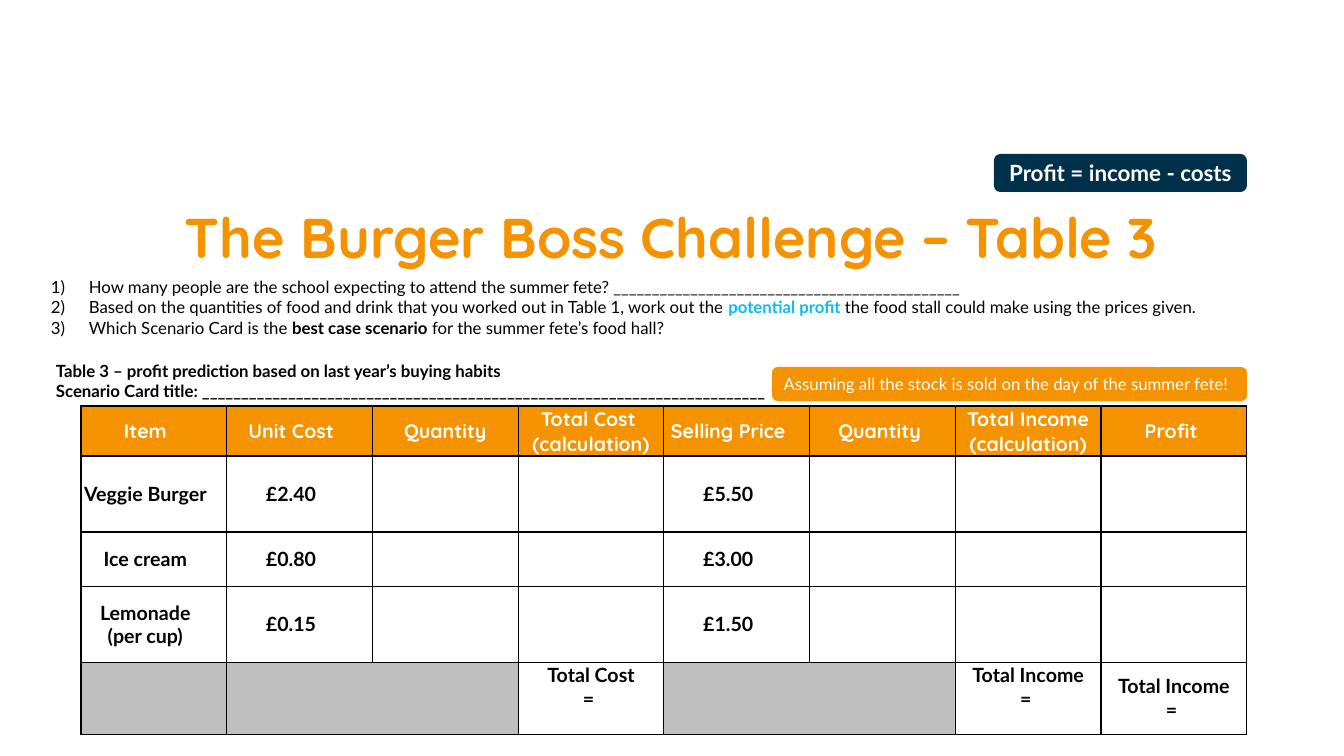
from lxml import etree
from pptx import Presentation
from pptx.dml.color import RGBColor
from pptx.enum.shapes import MSO_SHAPE
from pptx.enum.text import MSO_ANCHOR, MSO_AUTO_SIZE, PP_ALIGN
from pptx.oxml.ns import qn
from pptx.util import Pt

SCALE = 914400 / 100.8
ORANGE = RGBColor(0xF4, 0x92, 0x00)
NAVY = RGBColor(0x01, 0x30, 0x4A)
BLUE = RGBColor(0x0F, 0xBA, 0xEF)
GREY = RGBColor(0xBF, 0xBF, 0xBF)
BLACK = RGBColor(0, 0, 0)
WHITE = RGBColor(255, 255, 255)
BODY, HEAD = "Lato", "Quicksand"
ROUND = MSO_SHAPE.ROUNDED_RECTANGLE
LEFT, CENTER = PP_ALIGN.LEFT, PP_ALIGN.CENTER
TOP, MIDDLE = MSO_ANCHOR.TOP, MSO_ANCHOR.MIDDLE
NO_FIT, GROW = MSO_AUTO_SIZE.NONE, MSO_AUTO_SIZE.SHAPE_TO_FIT_TEXT

TASKS = [
    [("How many people are the school expecting to attend the summer fete? "
      + "_" * 45, False, BLACK)],
    [("Based on the quantities of food and drink that you worked out in "
      "Table 1, work out the ", False, BLACK),
     ("potential profit ", True, BLUE),
     ("the food stall could make using the prices given.", False, BLACK)],
    [("Which Scenario Card is the ", False, BLACK),
     ("best case scenario", True, BLACK),
     (" for the summer fete’s food hall?", False, BLACK)],
]
HEADS = ["Item", "Unit Cost", "Quantity", "Total Cost \n(calculation)",
         "Selling Price", "Quantity ", "Total Income\n(calculation)", "Profit "]
ITEMS = [("Veggie Burger", "£2.40", "£5.50"),
         ("Ice cream", "£0.80", "£3.00"),
         ("Lemonade (per cup)", "£0.15", "£1.50")]
TOTALS = {3: "Total Cost\n= ", 6: "Total Income\n= ", 7: "Total Income\n= "}
ROWS = [50, 76, 50, 76, 72]
TIGHT = (1, 1, 1, 1)


def px(num):
    """Turn pixels into EMU."""
    return round(num * SCALE)


def plain(text, color=BLACK, bold=True):
    """Split text into lines of one run each."""
    return [[(line, bold, color)] for line in text.split("\n")]


def write(frame, lines, size, font=BODY, align=LEFT):
    """Fill a text frame run by run."""
    for pos, runs in enumerate(lines):
        para = frame.add_paragraph() if pos else frame.paragraphs[0]
        para.alignment = align
        for text, bold, color in runs:
            run = para.add_run()
            run.text = text
            run.font.size = Pt(size)
            run.font.name = font
            run.font.bold = bold
            run.font.color.rgb = color


def add_text(slide, box, lines, size, font=BODY, align=LEFT, anchor=TOP,
             fit=GROW):
    """Add a wrapping text box and return its frame."""
    frame = slide.shapes.add_textbox(*map(px, box)).text_frame
    frame.word_wrap = True
    frame.auto_size = fit
    frame.vertical_anchor = anchor
    write(frame, lines, size, font, align)
    return frame


def add_badge(slide, box, fill, lines, size, align, anchor, wrap):
    """Add a filled rounded label."""
    shape = slide.shapes.add_shape(ROUND, *map(px, box))
    shape.shadow.inherit = False
    shape.fill.solid()
    shape.fill.fore_color.rgb = fill
    shape.line.fill.background()
    frame = shape.text_frame
    frame.word_wrap = wrap
    frame.vertical_anchor = anchor
    write(frame, lines, size, align=align)


def number(para):
    """Give a paragraph a hanging number."""
    props = para._p.get_or_add_pPr()
    props.set("marL", str(px(38)))
    props.set("indent", str(-px(38)))
    mark = etree.SubElement(props, qn("a:buAutoNum"))
    mark.set("type", "arabicParenR")


def border(cell):
    """Draw thin black lines on all sides of a cell."""
    props = cell._tc.get_or_add_tcPr()
    for side in ("a:lnL", "a:lnR", "a:lnT", "a:lnB"):
        line = etree.SubElement(props, qn(side), w=str(Pt(1)))
        fill = etree.SubElement(line, qn("a:solidFill"))
        etree.SubElement(fill, qn("a:srgbClr"), val=str(BLACK))


def set_cell(cell, text="", fill=None, color=BLACK, font=BODY, pads=TIGHT,
             anchor=MIDDLE):
    """Style one table cell and write its text."""
    border(cell)
    if fill is None:
        cell.fill.background()
    else:
        cell.fill.solid()
        cell.fill.fore_color.rgb = fill
    (cell.margin_left, cell.margin_top,
     cell.margin_right, cell.margin_bottom) = map(px, pads)
    cell.vertical_anchor = anchor
    if text:
        write(cell.text_frame, plain(text, color), 14, font, CENTER)


def add_grid(slide):
    """Add the profit table."""
    wide = px(1166)
    table = slide.shapes.add_table(len(ROWS), len(HEADS), px(81), px(406),
                                   wide, px(sum(ROWS))).table
    table.first_row = table.horz_banding = False
    for col in table.columns:
        col.width = wide // len(HEADS)
    for row, high in zip(table.rows, ROWS):
        row.height = px(high)
    for col, text in enumerate(HEADS):
        pads = {0: (0, 8, 17, 8), 1: (0, 8, 17, 8), 4: (0, 8, 17, 8),
                7: (0, 8, 0, 8)}.get(col, TIGHT)
        set_cell(table.cell(0, col), text, ORANGE, WHITE, HEAD, pads)
    for row, (item, cost, price) in enumerate(ITEMS, 1):
        texts = {0: item, 1: cost, 4: price}
        for col in range(len(HEADS)):
            set_cell(table.cell(row, col), texts.get(col, ""),
                     pads=(0, 12, 17, 12))
    last = len(ROWS) - 1
    for col in range(len(HEADS)):
        text = TOTALS.get(col, "")
        pads = (0, 12, 0, 12) if col == 7 else TIGHT
        set_cell(table.cell(last, col), text, None if text else GREY,
                 pads=pads, anchor=TOP)
    for col in (1, 4):
        table.cell(last, col).merge(table.cell(last, col + 1))


def main():
    """Build the slide and save it."""
    deck = Presentation()
    deck.slide_width, deck.slide_height = px(1344), px(756)
    slide = deck.slides.add_slide(deck.slide_layouts[6])
    title = add_text(slide, (39, 207, 1264, 66),
                     plain("The Burger Boss Challenge – Table 3", ORANGE),
                     40, HEAD, CENTER, MIDDLE, NO_FIT)
    title.paragraphs[0].line_spacing = 0.9
    tasks = add_text(slide, (41, 272, 1240, 72), TASKS, 12)
    for para in tasks.paragraphs:
        number(para)
    add_grid(slide)
    add_badge(slide, (772, 367, 475, 34), ORANGE,
              plain("Assuming all the stock is sold on the day of the "
                    "summer fete!", WHITE, False), 12, LEFT, TOP, False)
    add_badge(slide, (994, 154, 253, 38), NAVY,
              plain("Profit = income - costs", WHITE), 16, CENTER, MIDDLE, True)
    add_text(slide, (46, 356, 1181, 50),
             plain("Table 3 – profit prediction based on last year’s buying "
                   "habits\nScenario Card title: " + "_" * 72), 12)
    deck.save("out.pptx")


if __name__ == "__main__":
    main()
